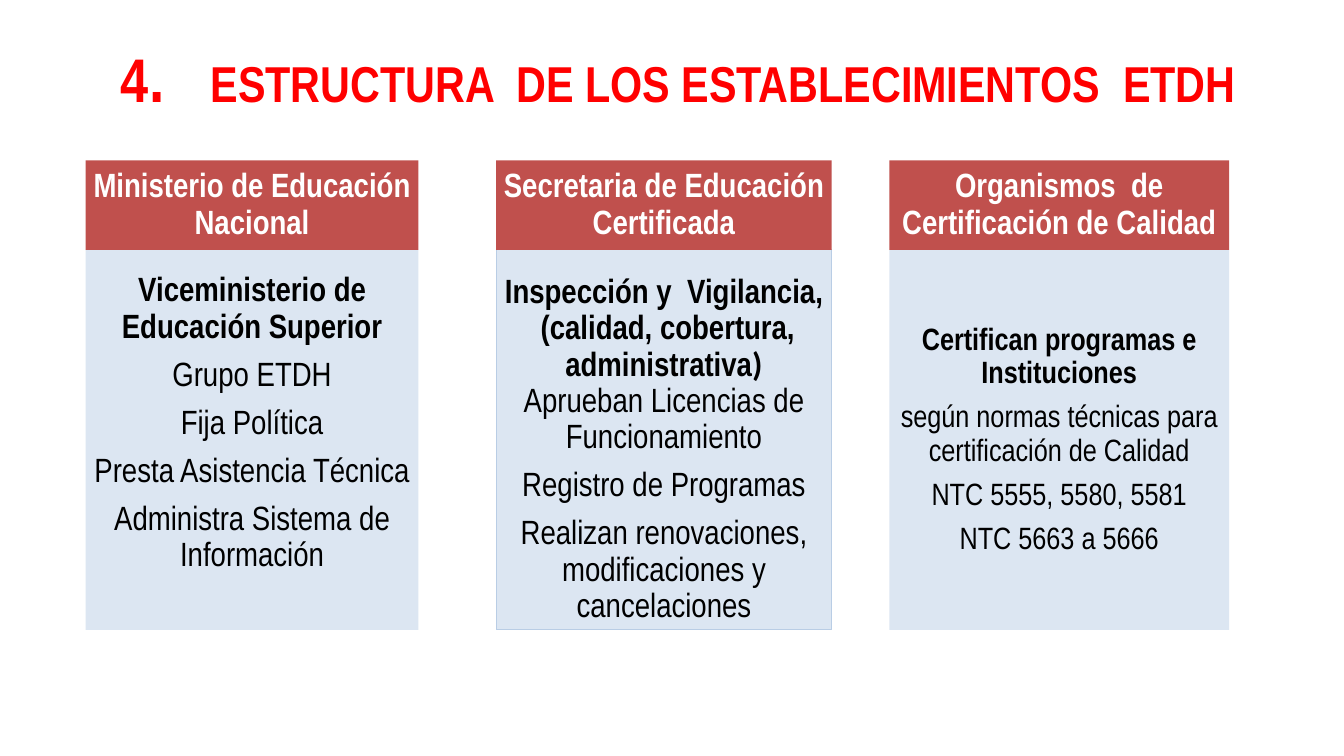
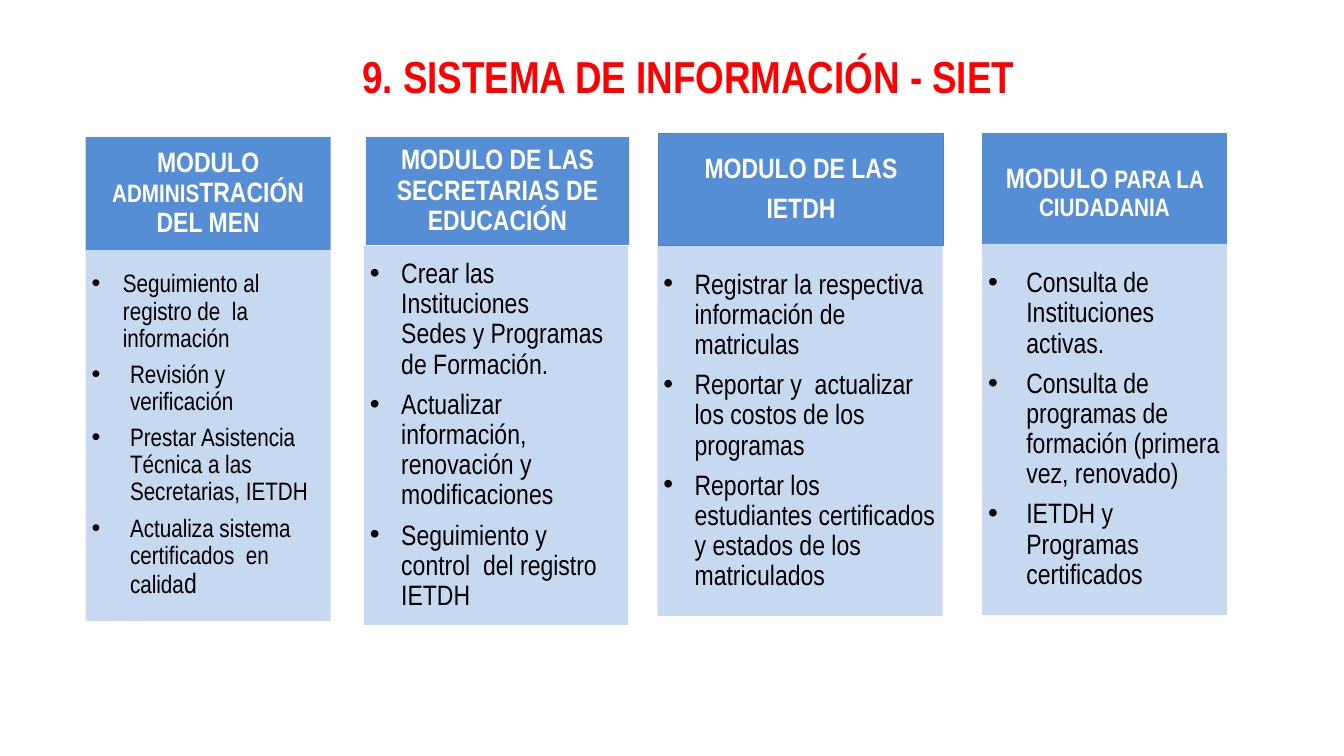
from dataclasses import dataclass

from lxml.etree import SubElement
from pptx import Presentation
from pptx.dml.color import RGBColor
from pptx.enum.shapes import MSO_SHAPE
from pptx.enum.text import MSO_ANCHOR, MSO_AUTO_SIZE, PP_ALIGN
from pptx.oxml.ns import qn
from pptx.util import Inches, Pt

FONT = "Arial Narrow"
TITLE_RED, WHITE, BLACK = "FF0000", "FFFFFF", "000000"
BRICK, PALE_BLUE = "C0504D", "DCE6F2"
BLUE, SKY_BLUE = "558ED5", "C6D9F1"
INSET = 0.06


@dataclass(frozen=True)
class Run:
    """A stretch of text with its departures from the paragraph font."""
    text: str
    size: float | None = None
    bold: bool | None = None
    font: str | None = None


@dataclass(frozen=True)
class Para:
    """A paragraph; hanging is its hanging indent in inches."""
    content: str | tuple[Run, ...]
    size: float = 20
    bold: bool = False
    hanging: float = 0
    bullet: bool = False
    align: PP_ALIGN = PP_ALIGN.CENTER


@dataclass(frozen=True)
class Panel:
    """A filled rectangle with text and extra top or bottom inset."""
    left: float
    top: float
    width: float
    height: float
    fill: str
    paras: tuple[Para, ...]
    colour: str = BLACK
    outline: str | None = None
    pad_top: float = 0
    pad_bottom: float = 0


@dataclass(frozen=True)
class Page:
    """A slide with a title and its panels."""
    title: Para
    title_left: float
    title_width: float
    panels: tuple[Panel, ...]


def rgb(colour: str) -> RGBColor:
    """Turn a hex string into a colour."""
    return RGBColor.from_string(colour)


def header(text: str | tuple[Run, ...], size: float = 20) -> Para:
    """Make a bold heading paragraph."""
    return Para(text, size, bold=True)


def bullet(text: str | tuple[Run, ...], size: float = 20, hanging: float = 0.31) -> Para:
    """Make a bulleted paragraph."""
    return Para(text, size, hanging=hanging, bullet=True, align=PP_ALIGN.LEFT)


def write_paragraph(paragraph, para: Para, colour: str) -> None:
    """Fill a paragraph with text and formatting."""
    paragraph.alignment = para.align
    properties = paragraph._p.get_or_add_pPr()
    if para.hanging:
        properties.set("marL", str(Inches(para.hanging)))
        properties.set("indent", str(-Inches(para.hanging)))
    if para.bullet:
        SubElement(properties, qn("a:buFont"), typeface="Arial")
        SubElement(properties, qn("a:buChar"), char="•")
    font = paragraph.font
    font.name, font.size, font.bold = FONT, Pt(para.size), para.bold
    font.color.rgb = rgb(colour)
    runs = (Run(para.content),) if isinstance(para.content, str) else para.content
    for part in runs:
        for index, line in enumerate(part.text.split("\n")):
            if index:
                paragraph.add_line_break()
            run = paragraph.add_run()
            run.text = line
            if part.size is not None:
                run.font.size = Pt(part.size)
            if part.bold is not None:
                run.font.bold = part.bold
            if part.font is not None:
                run.font.name = part.font


def draw_title(slide, page: Page) -> None:
    """Place and format the title placeholder."""
    title = slide.shapes.title
    title.left, title.top = Inches(page.title_left), Inches(0.3)
    title.width, title.height = Inches(page.title_width), Inches(0.9)
    frame = title.text_frame
    frame.auto_size = MSO_AUTO_SIZE.NONE
    frame.word_wrap = True
    frame.vertical_anchor = MSO_ANCHOR.MIDDLE
    write_paragraph(frame.paragraphs[0], page.title, TITLE_RED)


def draw_panel(slide, panel: Panel) -> None:
    """Draw one panel with its paragraphs."""
    shape = slide.shapes.add_shape(
        MSO_SHAPE.RECTANGLE, Inches(panel.left), Inches(panel.top),
        Inches(panel.width), Inches(panel.height))
    shape.shadow.inherit = False
    shape.fill.solid()
    shape.fill.fore_color.rgb = rgb(panel.fill)
    if panel.outline:
        shape.line.color.rgb = rgb(panel.outline)
        shape.line.width = Pt(0.75)
    else:
        shape.line.fill.background()
    frame = shape.text_frame
    frame.word_wrap = True
    frame.vertical_anchor = MSO_ANCHOR.MIDDLE
    frame.margin_left = frame.margin_right = Inches(INSET)
    frame.margin_top = Inches(INSET + panel.pad_top)
    frame.margin_bottom = Inches(INSET + panel.pad_bottom)
    for index, para in enumerate(panel.paras):
        paragraph = frame.add_paragraph() if index else frame.paragraphs[0]
        paragraph.line_spacing = 0.9
        paragraph.space_after = Pt(round(0.35 * para.size, 1))
        write_paragraph(paragraph, para, panel.colour)


def authority(left: float, width: float, name: str, duties: tuple[Para, ...],
              outline: str | None = None, pad_top: float = 0,
              pad_bottom: float = 0) -> tuple[Panel, Panel]:
    """Make the heading and duties of one authority."""
    return (
        Panel(left, 2.48, width, 3.77, PALE_BLUE, duties, outline=outline,
              pad_top=pad_top, pad_bottom=pad_bottom),
        Panel(left, 1.59, width, 0.89, BRICK, (header(name, 24),), WHITE),
    )


STRUCTURE = Page(
    Para((Run("4", 44), Run(".\t", 48), Run("ESTRUCTURA  DE LOS ESTABLECIMIENTOS  ETDH")),
         36, bold=True, hanging=0.89, align=PP_ALIGN.LEFT),
    1.1, 11.9,
    (
        *authority(0.85, 3.3, "Ministerio de Educación Nacional", (
            header("Viceministerio de Educación Superior", 24),
            Para("Grupo ETDH", 24),
            Para("Fija Política", 24),
            Para("Presta Asistencia Técnica", 24),
            Para("Administra Sistema de Información", 24),
        ), pad_bottom=0.33),
        *authority(4.92, 3.33, "Secretaria de Educación Certificada", (
            Para((
                Run("Inspección y  Vigilancia,  (calidad, cobertura, administrativa", bold=True),
                Run(") ", bold=True, font="Calibri"),
                Run("Aprueban Licencias de Funcionamiento"),
            ), 24),
            Para("Registro de Programas", 24),
            Para("Realizan renovaciones, modificaciones y cancelaciones", 24),
        ), outline="B9CDE5", pad_top=0.19),
        *authority(8.82, 3.37, "Organismos  de Certificación de Calidad", (
            header("Certifican programas e Instituciones", 22),
            Para("según normas técnicas para certificación de Calidad", 22),
            Para("NTC 5555, 5580, 5581", 22),
            Para("NTC 5663 a 5666", 22),
        )),
    ),
)

INFORMATION_SYSTEM = Page(
    Para("9. SISTEMA DE INFORMACIÓN - SIET", 32, bold=True),
    0.9, 11.86,
    (
        Panel(0.85, 2.48, 2.43, 3.68, SKY_BLUE, (
            bullet("Seguimiento al registro de  la información", 18),
            bullet("Revisión y verificación", 18, 0.38),
            bullet("Prestar Asistencia Técnica a las  Secretarias, IETDH", 18, 0.38),
            bullet((Run("Actualiza sistema certificados  en calida"), Run("d", 20)), 18, 0.38),
        )),
        Panel(0.85, 1.36, 2.43, 1.12, BLUE, (
            header((Run("MODULO "), Run("ADMINIS", 18), Run("TRACIÓN\nDEL MEN"))),
        ), WHITE),
        Panel(3.61, 2.44, 2.62, 3.76, SKY_BLUE, (
            bullet("Crear las Instituciones\nSedes y Programas de Formación."),
            bullet("Actualizar información, renovación y modificaciones"),
            bullet("Seguimiento y control  del registro IETDH"),
        )),
        Panel(3.63, 1.36, 2.61, 1.07, BLUE, (
            header("MODULO DE LAS SECRETARIAS DE EDUCACIÓN"),
        ), WHITE),
        Panel(6.52, 2.44, 2.83, 3.67, SKY_BLUE, (
            bullet("Registrar la respectiva información de matriculas"),
            bullet("Reportar y  actualizar los costos de los programas"),
            bullet("Reportar los estudiantes certificados y estados de los matriculados"),
        )),
        Panel(6.53, 1.32, 2.83, 1.12, BLUE, (
            header("MODULO DE LAS"),
            header("IETDH"),
        ), WHITE, outline="4F81BD"),
        Panel(9.74, 1.32, 2.43, 1.13, BLUE, (
            header((Run("MODULO "), Run("PARA LA CIUDADANIA", 18))),
        ), WHITE, pad_top=0.07),
        Panel(9.74, 2.42, 2.43, 3.68, SKY_BLUE, (
            bullet("Consulta de Instituciones activas.", hanging=0.38),
            bullet("Consulta de programas de formación (primera vez, renovado)", hanging=0.38),
            bullet("IETDH y Programas certificados", hanging=0.38),
        )),
    ),
)


def main() -> None:
    """Build and save the presentation."""
    presentation = Presentation()
    presentation.slide_width, presentation.slide_height = Inches(13.33), Inches(7.5)
    for page in (STRUCTURE, INFORMATION_SYSTEM):
        slide = presentation.slides.add_slide(presentation.slide_layouts[5])
        draw_title(slide, page)
        for panel in page.panels:
            draw_panel(slide, panel)
    presentation.save("out.pptx")


if __name__ == "__main__":
    main()
